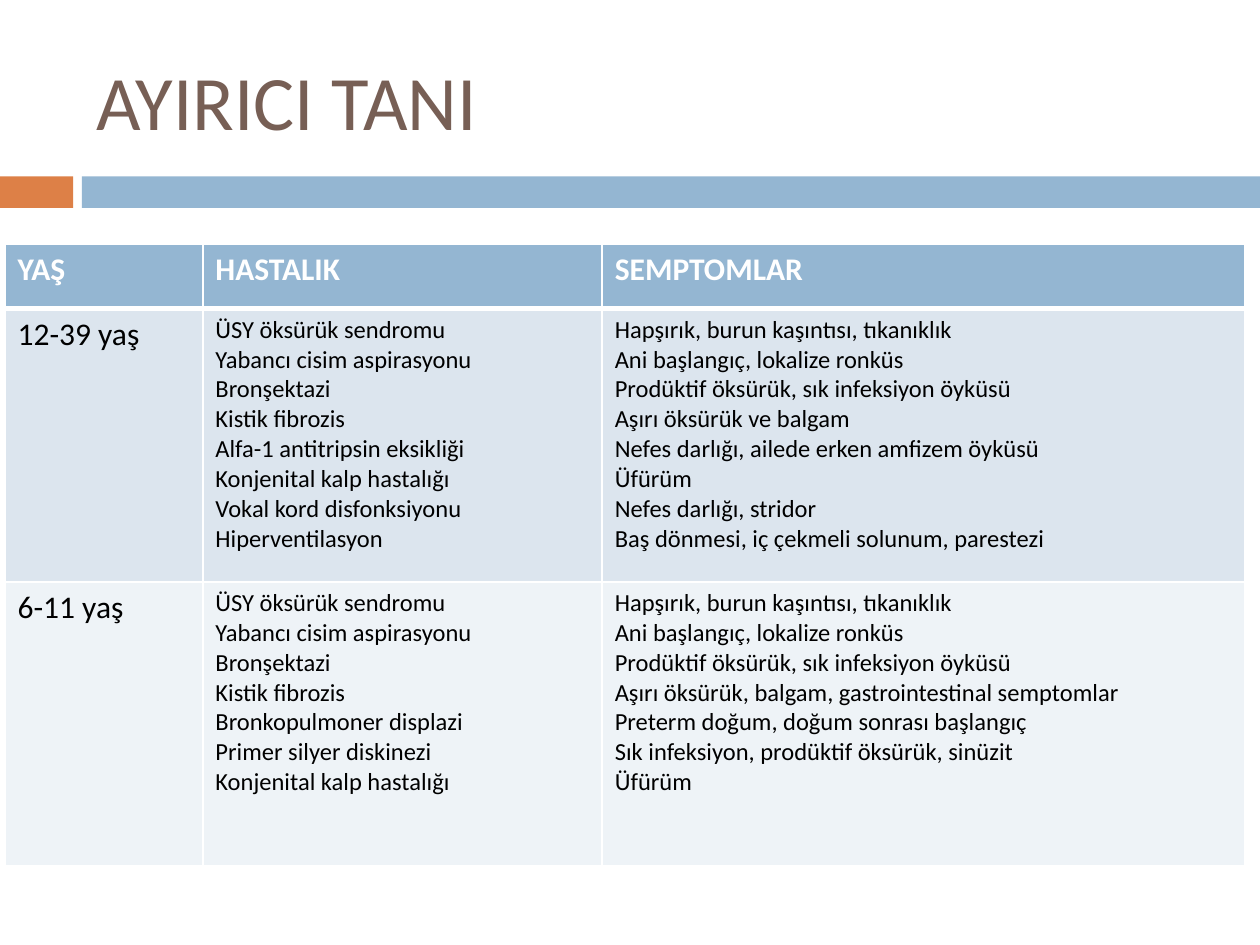
from dataclasses import dataclass

from lxml.etree import SubElement
from pptx import Presentation
from pptx.dml.color import RGBColor
from pptx.enum.shapes import MSO_SHAPE as Shape
from pptx.enum.text import MSO_ANCHOR as Anchor
from pptx.oxml.ns import qn
from pptx.util import Inches, Pt

WIDTH, HEIGHT = 10, 7.5
FONT = "Calibri"
BLUE, ORANGE, BROWN = "94B6D2", "DD8047", "775F55"
WHITE, BLACK = "FFFFFF", "000000"
COLS = (1.57, 3.17, 5.1)


@dataclass
class Band:
    left: float
    width: float
    color: str


@dataclass
class Row:
    height: float
    fill: str
    cells: tuple
    sizes: tuple = (18, 14, 14)
    color: str = BLACK
    bold: bool = False
    bottom: float = 1


BANDS = (Band(0, 0.058, ORANGE), Band(0.065, 0.935, BLUE))

ROWS = (
    Row(0.51, BLUE, (("YAŞ",), ("HASTALIK",), ("SEMPTOMLAR",)),
        (18, 18, 18), WHITE, True, 3),
    Row(2.17, "DCE5EE", (
        ("12-39 yaş",),
        ("ÜSY öksürük sendromu", "Yabancı cisim aspirasyonu", "Bronşektazi",
         "Kistik fibrozis", "Alfa-1 antitripsin eksikliği",
         "Konjenital kalp hastalığı",
         "Vokal kord disfonksiyonu Hiperventilasyon"),
        ("Hapşırık, burun kaşıntısı, tıkanıklık",
         "Ani başlangıç, lokalize ronküs",
         "Prodüktif öksürük, sık infeksiyon öyküsü",
         "Aşırı öksürük ve balgam",
         "Nefes darlığı, ailede erken amfizem öyküsü", "Üfürüm",
         "Nefes darlığı, stridor",
         "Baş dönmesi, iç çekmeli solunum, parestezi"))),
    Row(2.25, "EEF3F7", (
        ("6-11 yaş",),
        ("ÜSY öksürük sendromu", "Yabancı cisim aspirasyonu", "Bronşektazi",
         "Kistik fibrozis", "Bronkopulmoner displazi",
         "Primer silyer diskinezi", "Konjenital kalp hastalığı"),
        ("Hapşırık, burun kaşıntısı, tıkanıklık",
         "Ani başlangıç, lokalize ronküs",
         "Prodüktif öksürük, sık infeksiyon öyküsü",
         "Aşırı öksürük, balgam, gastrointestinal semptomlar",
         "Preterm doğum, doğum sonrası başlangıç",
         "Sık infeksiyon, prodüktif öksürük, sinüzit", "Üfürüm"))),
)


def paint(target, color: str) -> None:
    target.solid()
    target.fore_color.rgb = RGBColor.from_string(color)


def write(tf, lines: tuple, size: float, color: str, bold: bool = False) -> None:
    tf.word_wrap = True
    for i, line in enumerate(lines):
        p = tf.add_paragraph() if i else tf.paragraphs[0]
        r = p.add_run()
        r.text = line
        r.font.name, r.font.size, r.font.bold = FONT, Pt(size), bold
        paint(r.font.fill, color)


def draw_band(s, band: Band) -> None:
    sp = s.shapes.add_shape(
        Shape.RECTANGLE, Inches(band.left * WIDTH), Inches(1.4),
        Inches(band.width * WIDTH), Inches(0.25))
    sp.shadow.inherit = False
    paint(sp.fill, band.color)
    sp.line.fill.background()


def draw_title(s, text: str) -> None:
    sp = s.shapes.add_textbox(Inches(0.67), Inches(0.25), Inches(8.92), Inches(1.08))
    sp.text_frame.vertical_anchor = Anchor.MIDDLE
    write(sp.text_frame, (text,), 44, BROWN)


def add_borders(cell, top: float, bottom: float) -> None:
    pr = cell._tc.get_or_add_tcPr()
    for side, width in (("L", 1), ("R", 1), ("T", top), ("B", bottom)):
        ln = SubElement(pr, qn(f"a:ln{side}"), w=str(Pt(width)))
        SubElement(SubElement(ln, qn("a:solidFill")), qn("a:srgbClr"), val=WHITE)


def draw_table(s, rows: tuple) -> None:
    table = s.shapes.add_table(
        len(rows), len(COLS), Inches(0.04), Inches(1.94), Inches(sum(COLS)),
        Inches(sum(row.height for row in rows))).table
    for col, width in zip(table.columns, COLS):
        col.width = Inches(width)
    top = 1
    for i, row in enumerate(rows):
        table.rows[i].height = Inches(row.height)
        for j, (lines, size) in enumerate(zip(row.cells, row.sizes)):
            cell = table.cell(i, j)
            write(cell.text_frame, lines, size, row.color, row.bold)
            add_borders(cell, top, row.bottom)
            paint(cell.fill, row.fill)
        top = row.bottom


def main() -> None:
    prs = Presentation()
    prs.slide_width, prs.slide_height = Inches(WIDTH), Inches(HEIGHT)
    s = prs.slides.add_slide(prs.slide_layouts[6])
    for band in BANDS:
        draw_band(s, band)
    draw_title(s, "AYIRICI TANI")
    draw_table(s, ROWS)
    prs.save("out.pptx")


if __name__ == "__main__":
    main()
